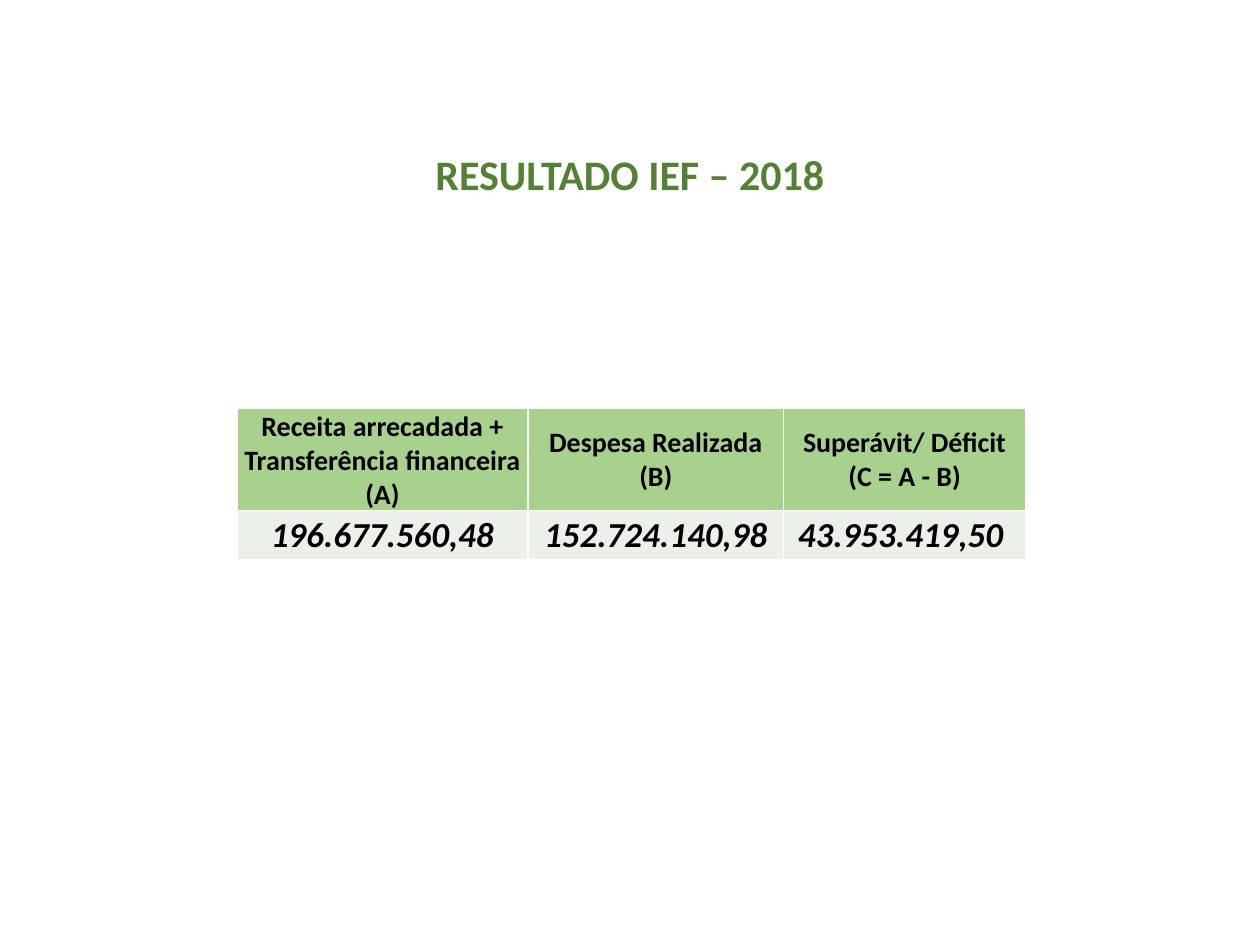
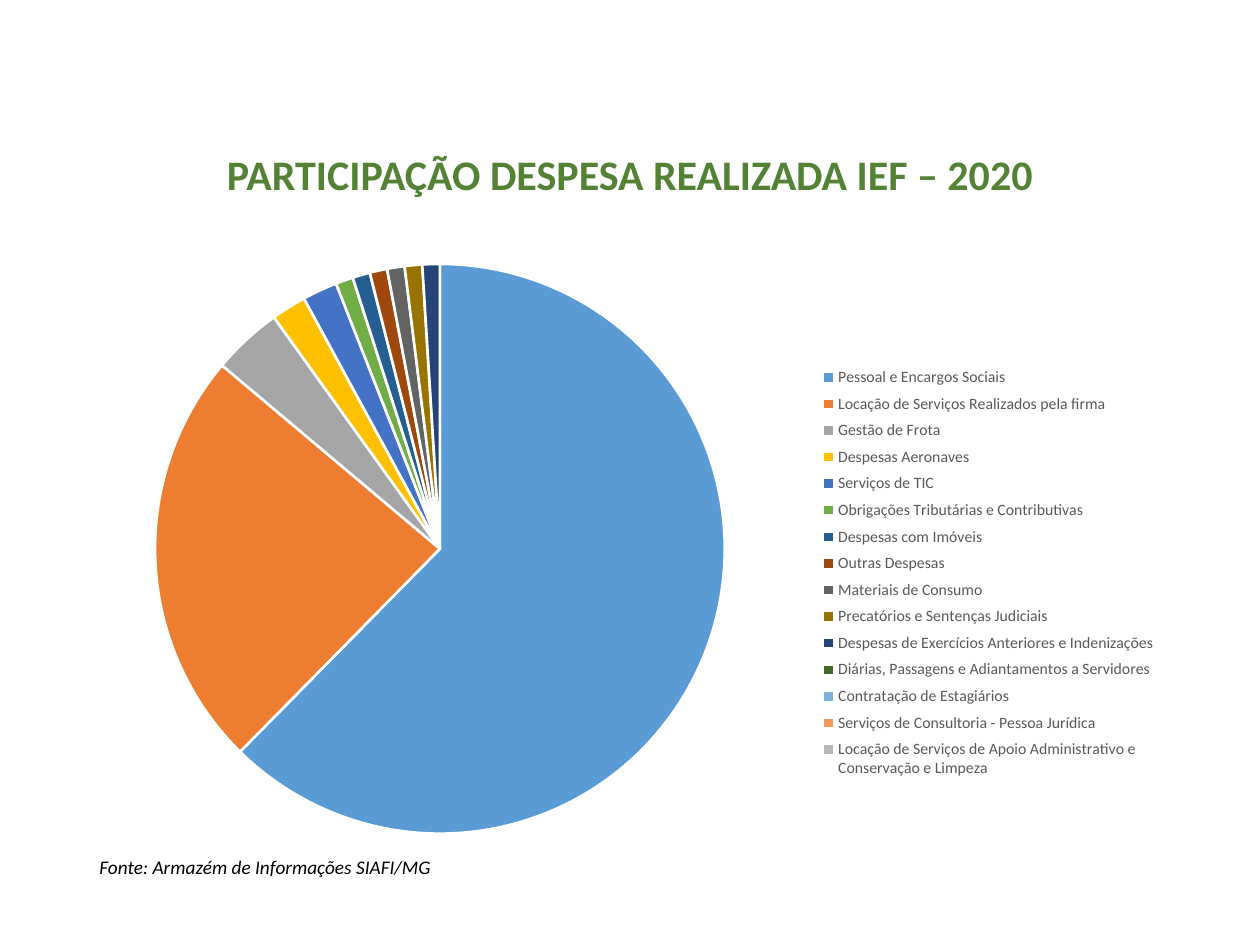
from dataclasses import dataclass

from lxml.etree import SubElement
from pptx import Presentation
from pptx.chart.data import CategoryChartData as ChartData
from pptx.dml.color import RGBColor
from pptx.enum.chart import XL_CHART_TYPE as ChartType, XL_LEGEND_POSITION as LegendPosition
from pptx.enum.text import MSO_ANCHOR as Anchor, PP_ALIGN as Align
from pptx.oxml.ns import qn
from pptx.util import Inches, Pt

RESULT_TITLE = "RESULTADO IEF – 2018"
RESULT_ROWS = [
    [
        ["Receita arrecadada +", "Transferência financeira", "(A)"],
        ["Despesa Realizada", "(B)"],
        ["Superávit/ Déficit", "(C = A - B)"],
    ],
    [["196.677.560,48"], ["152.724.140,98"], ["43.953.419,50 "]],
]
SHARE_TITLE = "PARTICIPAÇÃO DESPESA REALIZADA IEF – 2020"
SHARE_SOURCE = "Fonte: Armazém de Informações SIAFI/MG"
EXPENSES = [
    ("Pessoal e Encargos Sociais", 63, "5B9BD5"),
    ("Locação de Serviços Realizados pela firma", 24, "ED7D31"),
    ("Gestão de Frota", 4, "A5A5A5"),
    ("Despesas Aeronaves", 2, "FFC000"),
    ("Serviços de TIC", 2, "4472C4"),
    ("Obrigações Tributárias e Contributivas", 1, "70AD47"),
    ("Despesas com Imóveis", 1, "255E91"),
    ("Outras Despesas", 1, "9E480E"),
    ("Materiais de Consumo", 1, "636363"),
    ("Precatórios e Sentenças Judiciais", 1, "997300"),
    ("Despesas de Exercícios Anteriores e Indenizações", 1, "264478"),
    ("Diárias, Passagens e Adiantamentos a Servidores", 0, "43682B"),
    ("Contratação de Estagiários", 0, "7CAFDD"),
    ("Serviços de Consultoria - Pessoa Jurídica", 0, "F1975A"),
    ("Locação de Serviços de Apoio Administrativo e Conservação e Limpeza", 0, "B7B7B7"),
]

TITLE_PLACE = (0.12, 1.06, 9.76, 0.69)
SOURCE_PLACE = (0.69, 6.78, 7.95, 0.2)
CHART_PLACE = (0.69, 2, 8.62, 4.76)
TABLE_CORNER = (1.88, 3.24)
COLUMN_WIDTHS = (2.31, 2.03, 1.92)
ROW_HEIGHTS = (0.64, 0.39)
PLOT_LAYOUT = {"x": 0.03, "y": 0.02, "w": 0.59, "h": 0.95}
LEGEND_LAYOUT = {"x": 0.67, "y": 0.18, "w": 0.32, "h": 0.71}


@dataclass(frozen=True)
class Theme:
    font: str = "Calibri"
    title: str = "548235"
    text: str = "000000"
    legend: str = "595959"
    line: str = "FFFFFF"
    row_fills: tuple = ("A9D18E", "EBF1E9")
    title_size: int = 24
    header_size: int = 16
    value_size: int = 20
    source_size: int = 11
    chart_size: int = 10
    legend_size: int = 9


THEME = Theme()


def style(font, color, size, **extra):
    font.color.rgb = RGBColor.from_string(color)
    values = {"name": THEME.font, "size": Pt(size), **extra}
    for name, value in values.items():
        setattr(font, name, value)


def write(frame, lines, color, size, align=Align.LEFT, spacing=None, **extra):
    for index, line in enumerate(lines):
        para = frame.paragraphs[0] if index == 0 else frame.add_paragraph()
        para.alignment = align
        para.line_spacing = spacing
        span = para.add_run()
        span.text = line
        style(span.font, color, size, **extra)


def add_text(page, place, line, color, size, **extra):
    box = page.shapes.add_textbox(*map(Inches, place))
    box.text_frame.word_wrap = True
    box.text_frame.vertical_anchor = Anchor.MIDDLE
    write(box.text_frame, [line], color, size, **extra)


def add_page(deck, title):
    page = deck.slides.add_slide(deck.slide_layouts[6])
    add_text(page, TITLE_PLACE, title, THEME.title, THEME.title_size,
             align=Align.CENTER, spacing=0.9, bold=True)
    return page


def add_borders(cell):
    properties = cell._tc.get_or_add_tcPr()
    for side in ("lnL", "lnR", "lnT", "lnB"):
        border = SubElement(properties, qn(f"a:{side}"), w=str(Pt(1)))
        fill = SubElement(border, qn("a:solidFill"))
        SubElement(fill, qn("a:srgbClr"), val=THEME.line)


def add_result_table(page):
    place = (*TABLE_CORNER, sum(COLUMN_WIDTHS), sum(ROW_HEIGHTS))
    table = page.shapes.add_table(len(RESULT_ROWS), len(COLUMN_WIDTHS), *map(Inches, place)).table
    for column, width in zip(table.columns, COLUMN_WIDTHS):
        column.width = Inches(width)
    formats = ({"size": THEME.header_size}, {"size": THEME.value_size, "italic": True})
    for index, texts in enumerate(RESULT_ROWS):
        table.rows[index].height = Inches(ROW_HEIGHTS[index])
        for cell, lines in zip(table.rows[index].cells, texts):
            add_borders(cell)
            cell.fill.solid()
            cell.fill.fore_color.rgb = RGBColor.from_string(THEME.row_fills[index])
            cell.vertical_anchor = Anchor.MIDDLE
            for side in ("left", "right", "top"):
                setattr(cell, f"margin_{side}", Inches(0.01))
            cell.margin_bottom = 0
            write(cell.text_frame, lines, THEME.text, align=Align.CENTER, bold=True, **formats[index])


def set_layout(element, layout, inner=False):
    for old in element.findall(qn("c:layout")):
        element.remove(old)
    holder = SubElement(element, qn("c:layout"))
    manual = SubElement(holder, qn("c:manualLayout"))
    if inner:
        SubElement(manual, qn("c:layoutTarget"), val="inner")
    for name in ("x", "y"):
        SubElement(manual, qn(f"c:{name}Mode"), val="edge")
    for name, value in layout.items():
        SubElement(manual, qn(f"c:{name}"), val=str(value))
    element.remove(holder)
    element.insert(0 if inner else 1, holder)


def add_share_chart(page):
    names, values, colors = zip(*EXPENSES)
    data = ChartData()
    data.categories = names
    data.add_series("Series 1", values)
    chart = page.shapes.add_chart(ChartType.PIE, *map(Inches, CHART_PLACE), data).chart
    style(chart.font, THEME.text, THEME.chart_size)
    chart.has_title = False
    chart.has_legend = True
    chart.legend.position = LegendPosition.RIGHT
    chart.legend.include_in_layout = False
    style(chart.legend.font, THEME.legend, THEME.legend_size)
    plot = chart.plots[0]
    plot.vary_by_categories = True
    for index, color in enumerate(colors):
        form = plot.series[0].points[index].format
        form.fill.solid()
        form.fill.fore_color.rgb = RGBColor.from_string(color)
        form.line.color.rgb = RGBColor.from_string(THEME.line)
        form.line.width = Pt(1.5)
    set_layout(chart._chartSpace.chart.plotArea, PLOT_LAYOUT, inner=True)
    set_layout(chart.legend._element, LEGEND_LAYOUT)


def main():
    deck = Presentation()
    deck.slide_width, deck.slide_height = Inches(10), Inches(7.5)
    add_result_table(add_page(deck, RESULT_TITLE))
    page = add_page(deck, SHARE_TITLE)
    add_text(page, SOURCE_PLACE, SHARE_SOURCE, THEME.text, THEME.source_size, italic=True)
    add_share_chart(page)
    deck.save("out.pptx")


if __name__ == "__main__":
    main()
